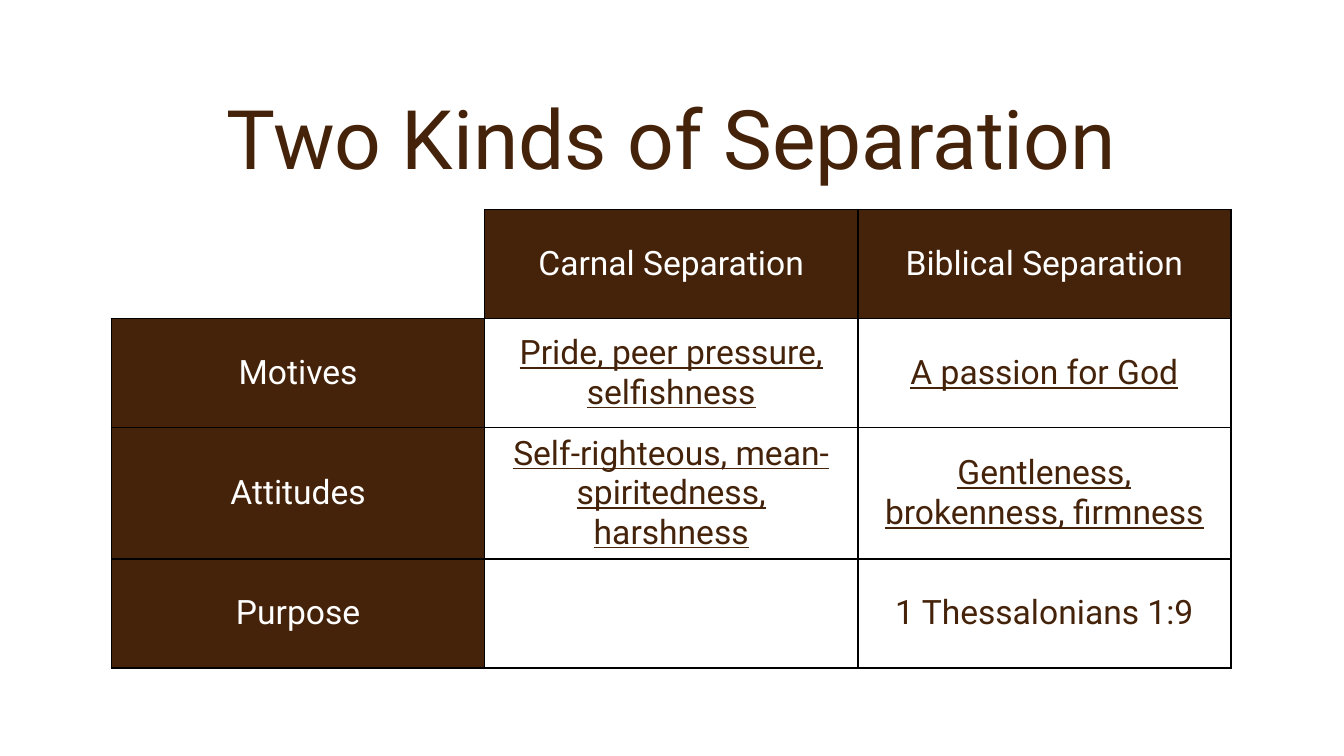
import pptx
import pptx.util
from lxml import etree
from pptx.dml.color import RGBColor
from pptx.enum.text import MSO_ANCHOR, PP_ALIGN
from pptx.oxml.ns import qn
from pptx.util import Inches, Pt

BROWN = RGBColor(0x45, 0x23, 0x0A)
WHITE = RGBColor(0xFF, 0xFF, 0xFF)
BLACK = RGBColor(0x00, 0x00, 0x00)
FONT = "Roboto"

TITLE = "Two Kinds of Separation"
ROWS = [
    ["", "Carnal Separation", "Biblical Separation"],
    ["Motives", "Pride, peer pressure, selfishness", "A passion for God"],
    ["Attitudes", "Self-righteous, mean-spiritedness, harshness",
     "Gentleness, brokenness, firmness"],
    ["Purpose", "", "1 Thessalonians 1:9"],
]
UNDERLINED_ROWS = (1, 2)
ROW_HEIGHT = 0.81
TABLE_WIDTH, TABLE_HEIGHT = Inches(8.33), Inches(3.44)


def write(frame, text, size, color, underline=False):
    para = frame.paragraphs[0]
    para.alignment = PP_ALIGN.CENTER
    formats = {"name": FONT, "size": Pt(size), "underline": underline}
    font = para.font
    if text:
        span = para.add_run()
        span.text = text
        font = span.font
    for name, value in formats.items():
        setattr(font, name, value)
    font.color.rgb = color
    return para


def set_borders(cell, hidden):
    """Draw all four cell edges, except those named in hidden."""
    properties = cell._tc.get_or_add_tcPr()
    for place, edge in enumerate(("lnL", "lnR", "lnT", "lnB")):
        line = etree.Element(qn(f"a:{edge}"), w=str(Pt(1)))
        if edge in hidden:
            etree.SubElement(line, qn("a:noFill"))
        else:
            fill = etree.SubElement(line, qn("a:solidFill"))
            etree.SubElement(fill, qn("a:srgbClr"), val=str(BLACK))
        properties.insert(place, line)


deck = pptx.Presentation()
deck.slide_width = Inches(10)
deck.slide_height = deck.slide_width * 9 // 16
page = deck.slides.add_slide(deck.slide_layouts[5])

title = page.shapes.title
title.left, title.top = Inches(0.5), Inches(0.48)
title.width, title.height = Inches(9), Inches(1.17)
title.text_frame.vertical_anchor = MSO_ANCHOR.MIDDLE
write(title.text_frame, TITLE, 44, BROWN).line_spacing = 0.9

table_frame = page.shapes.add_table(
    len(ROWS), len(ROWS[0]), Inches(0.83), Inches(1.56),
    TABLE_WIDTH, TABLE_HEIGHT)
table = table_frame.table
table.first_row = table.horz_banding = False

for r, texts in enumerate(ROWS):
    table.rows[r].height = Inches(ROW_HEIGHT)
    for c, text in enumerate(texts):
        cell = table.cell(r, c)
        corner = r == 0 and c == 0
        header = (r == 0 or c == 0) and not corner
        cell.vertical_anchor = MSO_ANCHOR.MIDDLE
        if header:
            cell.fill.solid()
            cell.fill.fore_color.rgb = BROWN
        else:
            cell.fill.background()
        set_borders(cell, ("lnL", "lnT") if corner else ())
        write(cell.text_frame, text, 18, WHITE if header else BROWN,
              r in UNDERLINED_ROWS and not header)
table_frame.height = TABLE_HEIGHT

deck.save("out.pptx")
